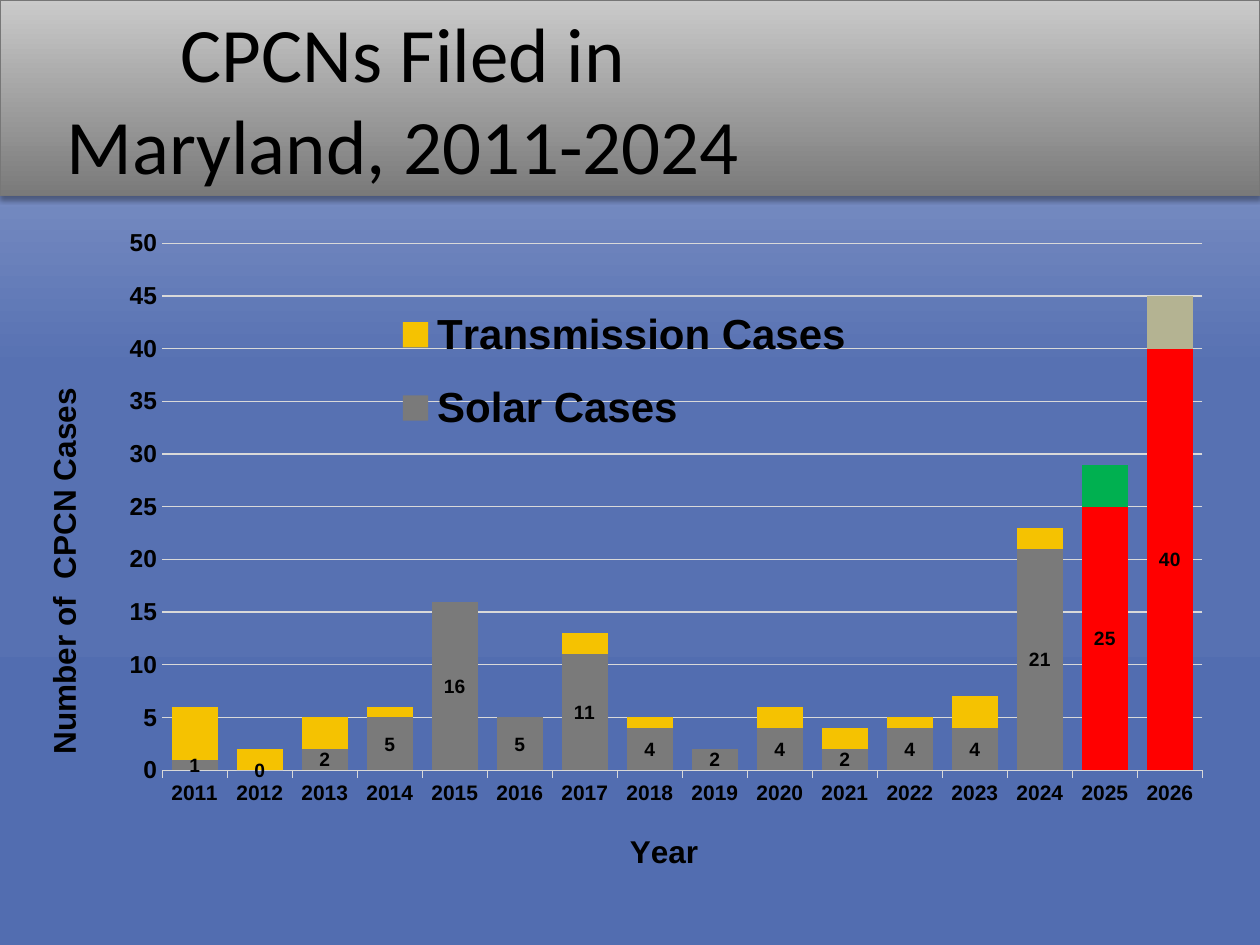
from copy import deepcopy

from lxml import etree
from pptx import Presentation
from pptx.chart.data import CategoryChartData
from pptx.dml.color import RGBColor
from pptx.enum.chart import XL_CHART_TYPE, XL_LABEL_POSITION, XL_LEGEND_POSITION, XL_TICK_MARK
from pptx.enum.shapes import MSO_SHAPE
from pptx.enum.text import MSO_ANCHOR, PP_ALIGN
from pptx.oxml.ns import qn
from pptx.util import Inches, Pt

STACKED = XL_CHART_TYPE.COLUMN_STACKED
CENTERED_LABEL = XL_LABEL_POSITION.CENTER
LEGEND_RIGHT = XL_LEGEND_POSITION.RIGHT
TICK_NONE, TICK_OUT = XL_TICK_MARK.NONE, XL_TICK_MARK.OUTSIDE
RECTANGLE = MSO_SHAPE.RECTANGLE
MIDDLE, CENTER = MSO_ANCHOR.MIDDLE, PP_ALIGN.CENTER

BLACK = RGBColor(0x00, 0x00, 0x00)
GRAY = RGBColor(0x7A, 0x7A, 0x7A)
LIGHT_GRAY = RGBColor(0xCA, 0xCA, 0xCA)
BORDER_GRAY = RGBColor(0x77, 0x77, 0x77)
GRID_GRAY = RGBColor(0xD9, 0xD9, 0xD9)
DEEP_BLUE = RGBColor(0x52, 0x6D, 0xB0)
MID_BLUE = RGBColor(0x57, 0x71, 0xB2)
PALE_BLUE = RGBColor(0x97, 0xA7, 0xD0)
YELLOW = RGBColor(0xF5, 0xC2, 0x01)
RED = RGBColor(0xFF, 0x00, 0x00)
GREEN = RGBColor(0x00, 0xB0, 0x50)
KHAKI = RGBColor(0xB4, 0xB3, 0x92)

SLIDE_WIDTH, SLIDE_HEIGHT = Inches(10), Inches(7.5)
HEADER_HEIGHT = Inches(1.55)
CHART_FONT = {"name": "Arial", "bold": True}

YEARS = [str(year) for year in range(2011, 2027)]
SERIES = [
    ("Solar Cases", [1, 0, 2, 5, 16, 5, 11, 4, 2, 4, 2, 4, 4, 21, 25, 40],
     GRAY, {"2025": RED, "2026": RED}),
    ("Transmission Cases", [5, 2, 3, 1, 0, 0, 2, 1, 0, 2, 2, 1, 3, 2, 4, 5],
     YELLOW, {"2025": GREEN, "2026": KHAKI}),
]


def format_font(font, size, **values):
    for name, value in {"size": Pt(size), **values}.items():
        setattr(font, name, value)
    font.color.rgb = BLACK


def format_line(line, color):
    line.color.rgb = color
    line.width = Pt(0.75)


def paint_solid(fill, color):
    fill.solid()
    fill.fore_color.rgb = color


def paint_gradient(fill, element, stops):
    """Paint (position, color) stops from the bottom of the element to its top."""
    fill.gradient()
    fill.gradient_angle = 90
    stop_list = next(element.iter(qn("a:gsLst")))
    while len(stop_list) < len(stops):
        stop_list.append(deepcopy(stop_list[0]))
    for stop, (position, color) in zip(fill.gradient_stops, stops):
        stop.position = position
        stop.color.rgb = color


def add_shadow(shape):
    shape.shadow.inherit = False
    effects = shape.element.spPr.find(qn("a:effectLst"))
    shadow = etree.SubElement(
        effects, qn("a:outerShdw"), blurRad=str(Pt(3.1)), dist=str(Pt(1.8)),
        dir="5400000", rotWithShape="0")
    color = etree.SubElement(shadow, qn("a:srgbClr"), val="000000")
    etree.SubElement(color, qn("a:alpha"), val="35000")


def add_header(slide):
    header = slide.shapes.add_shape(RECTANGLE, 0, 0, SLIDE_WIDTH, HEADER_HEIGHT)
    paint_gradient(header.fill, header.element, [(0, GRAY), (1, LIGHT_GRAY)])
    format_line(header.line, BORDER_GRAY)
    add_shadow(header)
    slide.shapes.element.insert(2, header.element)


def fill_title(slide, text):
    title = slide.shapes.title
    box = {"left": 0.31, "top": 0.15, "width": 5.78, "height": 1.25}
    for name, value in box.items():
        setattr(title, name, Inches(value))
    frame = title.text_frame
    frame.text = text
    frame.vertical_anchor = MIDDLE
    frame.paragraphs[0].alignment = CENTER
    format_font(frame.paragraphs[0].runs[0].font, 44, name="Calibri")


def set_layout(parent, index, target=None, **shares):
    """Place a chart part by shares of the chart's width and height."""
    for old in parent.findall(qn("c:layout")):
        parent.remove(old)
    layout = etree.Element(qn("c:layout"))
    manual = etree.SubElement(layout, qn("c:manualLayout"))
    if target:
        etree.SubElement(manual, qn("c:layoutTarget"), val=target)
    for mode in ("xMode", "yMode"):
        etree.SubElement(manual, qn(f"c:{mode}"), val="edge")
    for name, share in shares.items():
        etree.SubElement(manual, qn(f"c:{name}"), val=str(share))
    parent.insert(index, layout)


def format_axis(axis, title, size, tick, rotation, **place):
    axis.major_tick_mark = tick
    axis.minor_tick_mark = TICK_NONE
    format_font(axis.tick_labels.font, size, **CHART_FONT)
    frame = axis.axis_title.text_frame
    frame.text = title
    format_font(frame.paragraphs[0].runs[0].font, 18, **CHART_FONT)
    body = next(axis.axis_title.format.fill and axis.axis_title._element.iter(qn("a:bodyPr")))
    body.set("rot", str(rotation * 60000))
    set_layout(axis.axis_title._element, 1, **place)


def format_axes(chart):
    years, cases = chart.category_axis, chart.value_axis
    format_axis(years, "Year", 12, TICK_OUT, 0, x=0.5, y=0.84)
    format_line(years.format.line, GRID_GRAY)
    format_axis(cases, "Number of  CPCN Cases", 14, TICK_NONE, -90, x=0.03, y=0.25)
    scale = {"minimum_scale": 0, "maximum_scale": 50, "major_unit": 5}
    for name, value in scale.items():
        setattr(cases, name, value)
    cases.format.line.fill.background()
    format_line(cases.major_gridlines.format.line, GRID_GRAY)


def format_series(plot):
    for series, (_, _, color, highlights) in zip(plot.series, SERIES):
        paint_solid(series.format.fill, color)
        series.invert_if_negative = False
        for year, highlight in highlights.items():
            paint_solid(series.points[YEARS.index(year)].format.fill, highlight)
    labels = plot.series[0].data_labels
    labels.show_value = True
    labels.position = CENTERED_LABEL
    format_font(labels.font, 11, **CHART_FONT)


def add_legend(chart):
    chart.has_legend = True
    legend = chart.legend
    legend.position = LEGEND_RIGHT
    legend.include_in_layout = False
    format_font(legend.font, 24, **CHART_FONT)
    set_layout(legend._element, 1, x=0.3, y=0.12, w=0.4, h=0.23)


def add_cases_chart(slide):
    data = CategoryChartData()
    data.categories = YEARS
    for name, values, _, _ in SERIES:
        data.add_series(name, values)
    chart = slide.shapes.add_chart(
        STACKED, 0, HEADER_HEIGHT, Inches(9.91), SLIDE_HEIGHT - HEADER_HEIGHT, data).chart
    chart.has_title = False
    format_font(chart.font, 14, **CHART_FONT)
    plot = chart.plots[0]
    plot.gap_width, plot.overlap = 41, 100
    plot.vary_by_categories = False
    format_series(plot)
    format_axes(chart)
    add_legend(chart)
    plot_area = next(chart.element.iter(qn("c:plotArea")))
    set_layout(plot_area, 0, "inner", x=0.13, y=0.064, w=0.833, h=0.703)


def main():
    presentation = Presentation()
    presentation.slide_width, presentation.slide_height = SLIDE_WIDTH, SLIDE_HEIGHT
    slide = presentation.slides.add_slide(presentation.slide_layouts[5])
    paint_gradient(slide.background.fill, slide.element,
                   [(0, DEEP_BLUE), (0.61, MID_BLUE), (1, PALE_BLUE)])
    add_header(slide)
    fill_title(slide, "CPCNs Filed in Maryland, 2011-2024")
    add_cases_chart(slide)
    presentation.save("out.pptx")


if __name__ == "__main__":
    main()
